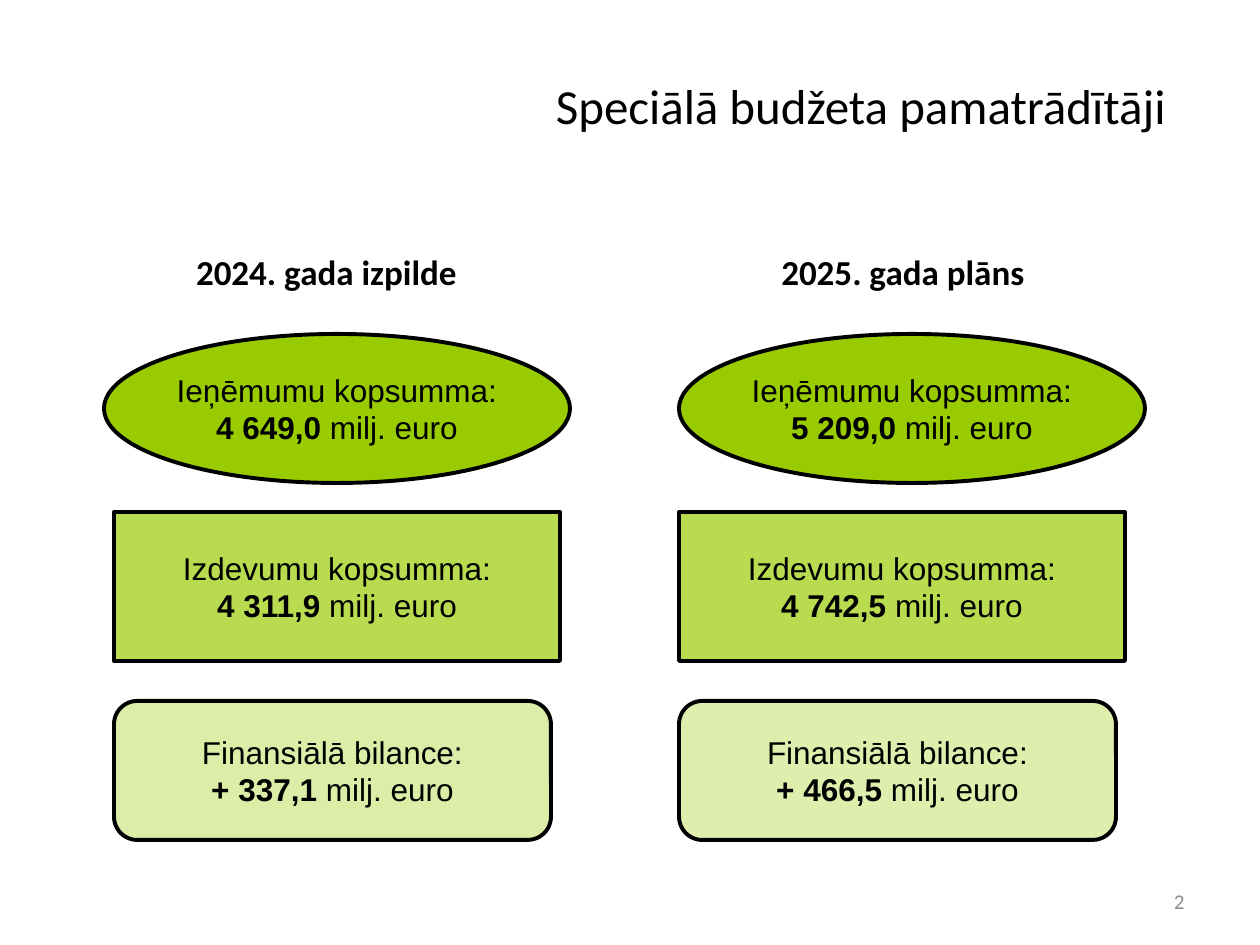
from lxml import etree
from pptx import Presentation
from pptx.dml.color import RGBColor
from pptx.enum.shapes import MSO_SHAPE
from pptx.enum.text import MSO_ANCHOR, PP_ALIGN
from pptx.oxml.ns import qn
from pptx.util import Pt

CENTER, RIGHT = PP_ALIGN.CENTER, PP_ALIGN.RIGHT
TOP, MIDDLE = MSO_ANCHOR.TOP, MSO_ANCHOR.MIDDLE
OVAL, RECT, ROUND = MSO_SHAPE.OVAL, MSO_SHAPE.RECTANGLE, MSO_SHAPE.ROUNDED_RECTANGLE

COLORS = {"text": "000000", "green": "99CC00", "number": "8C8C8C"}
TITLE = "Speciālā budžeta pamatrādītāji"
PAGE = "2"
UNIT = "milj. euro"
ROWS = [
    ("Ieņēmumu kopsumma:", OVAL, 334, 466, 149),
    ("Izdevumu kopsumma:", RECT, 512, 446, 149),
    ("Finansiālā bilance:", ROUND, 701, 437, 139),
]
YEARS = [
    {"heading": "2024. gada izpilde", "box": (64, 244, 525, 624), "lefts": (104, 114, 114),
     "values": ("4 649,0", "4 311,9", "+ 337,1"), "alphas": (100, 69, 34)},
    {"heading": "2025. gada plāns", "box": (620, 244, 566, 624), "lefts": (679, 679, 679),
     "values": ("5 209,0", "4 742,5", "+ 466,5"), "alphas": (100, 69, 32)},
]
SCALE = 914400 / 126


def px(n):
    return round(n * SCALE)


def rgb(name):
    return RGBColor.from_string(COLORS[name])


def place(sp, box):
    sp.left, sp.top, sp.width, sp.height = map(px, box)


def style(r, size, font, color="text", bold=False):
    r.font.size, r.font.name, r.font.bold = Pt(size), font, bold
    r.font.color.rgb = rgb(color)


def write(sp, text, size, align, anchor, color="text", bold=False):
    tf = sp.text_frame
    tf.text = text
    tf.word_wrap = True
    tf.vertical_anchor = anchor
    p = tf.paragraphs[0]
    p.alignment = align
    p.space_before = Pt(0)
    style(p.runs[0], size, "Calibri", color, bold)
    return p


def add_figure(s, kind, box, label, value, alpha):
    sp = s.shapes.add_shape(kind, *map(px, box))
    sp.shadow.inherit = False
    sp.fill.solid()
    sp.fill.fore_color.rgb = rgb("green")
    if alpha < 100:
        color = sp.fill._xPr.find(".//" + qn("a:srgbClr"))
        etree.SubElement(color, qn("a:alpha"), val=str(alpha * 1000))
    sp.line.color.rgb = rgb("text")
    sp.line.width = Pt(2.25)
    tf = sp.text_frame
    tf.word_wrap = False
    tf.vertical_anchor = MIDDLE
    tf.text = label
    p = tf.add_paragraph()
    p.text = value + " "
    p.add_run().text = UNIT
    for p in tf.paragraphs:
        p.alignment = CENTER
        for r in p.runs:
            style(r, 18, "Arial")
    tf.paragraphs[1].runs[0].font.bold = True


prs = Presentation()
prs.slide_width, prs.slide_height = px(1260), px(945)
s = prs.slides.add_slide(prs.slide_layouts[3])

title = s.shapes.title
place(title, (44, 26, 1134, 158))
write(title, TITLE, 28, RIGHT, MIDDLE)

for i, year in enumerate(YEARS, 1):
    body = s.placeholders[i]
    place(body, year["box"])
    p = write(body, year["heading"], 20, CENTER, TOP, bold=True)
    pPr = p._p.get_or_add_pPr()
    pPr.set("marL", "0")
    pPr.set("indent", "0")
    etree.SubElement(pPr, qn("a:buNone"))
    for (label, kind, top, width, height), left, value, alpha in zip(
            ROWS, year["lefts"], year["values"], year["alphas"]):
        add_figure(s, kind, (left, top, width, height), label, value, alpha)

number = s.shapes.add_textbox(*map(px, (903, 876, 294, 50)))
write(number, PAGE, 12, RIGHT, MIDDLE, "number")

prs.save("out.pptx")
